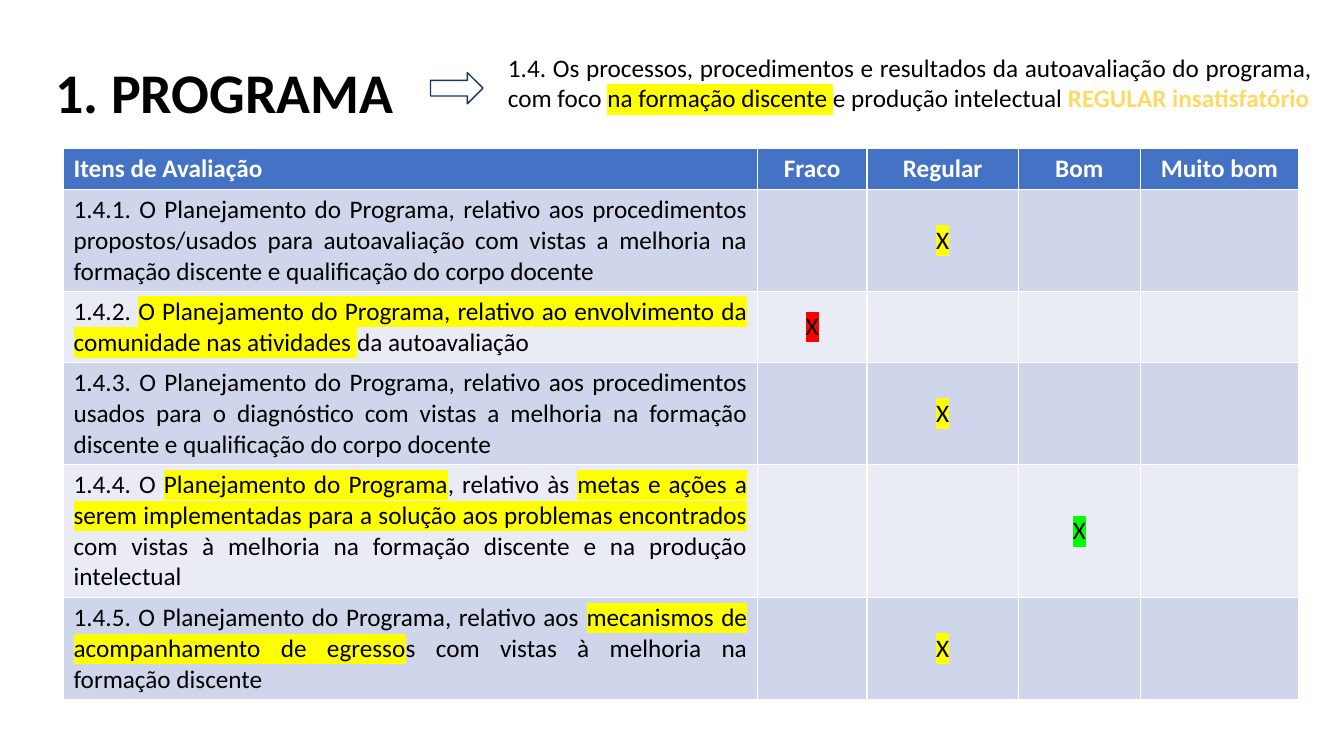
from dataclasses import dataclass
from typing import Optional

import pptx
import pptx.dml.color
import pptx.enum.shapes
import pptx.enum.text
import pptx.oxml.ns
import pptx.util
from lxml import etree

EMU_PER_PX = 9144  # 100 px to the inch
FONT = "Calibri"
COLORS = {
    "black": "000000",
    "white": "FFFFFF",
    "header": "4472C4",
    "band_dark": "CFD5EA",
    "band_light": "E9EBF5",
    "gold": "FFD966",
    "navy": "1E3256",
    "yellow": "FFFF00",
    "red": "FF0000",
    "green": "00FF00",
}
ALIGN = pptx.enum.text.PP_ALIGN
ANCHOR = pptx.enum.text.MSO_ANCHOR


@dataclass(frozen=True)
class Run:
    text: str
    color: str = "black"
    size: int = 18
    bold: bool = False
    highlight: Optional[str] = None


@dataclass(frozen=True)
class Item:
    """One evaluated item: its wording, and the rating column and colour of its mark."""
    height: int
    runs: tuple[Run, ...]
    rating: str
    mark: str


COLUMNS = {"Itens de Avaliação": 688, "Fraco": 109, "Regular": 150, "Bom": 121, "Muito bom": 157}
HEADER_HEIGHT = 41
ITEMS = (
    Item(101, (
        Run("1.4.1. O Planejamento do Programa, relativo aos procedimentos propostos/usados para "
            "autoavaliação com vistas a melhoria na formação discente e qualificação do corpo docente"),
    ), "Regular", "yellow"),
    Item(71, (
        Run("1.4.2. "),
        Run("O Planejamento do Programa, relativo ao envolvimento da comunidade nas atividades ",
            highlight="yellow"),
        Run("da autoavaliação"),
    ), "Fraco", "red"),
    Item(101, (
        Run("1.4.3. O Planejamento do Programa, relativo aos procedimentos usados para o diagnóstico "
            "com vistas a melhoria na formação discente e qualificação do corpo docente"),
    ), "Regular", "yellow"),
    Item(132, (
        Run("1.4.4. O "),
        Run("Planejamento do Programa", highlight="yellow"),
        Run(", relativo às "),
        Run("metas e ações a serem implementadas para a solução aos problemas encontrados ",
            highlight="yellow"),
        Run("com vistas à melhoria na formação discente e na produção intelectual"),
    ), "Bom", "green"),
    Item(101, (
        Run("1.4.5. O Planejamento do Programa, relativo aos "),
        Run("mecanismos de acompanhamento de egresso", highlight="yellow"),
        Run("s com vistas à melhoria na formação discente"),
    ), "Regular", "yellow"),
)
SUBTITLE = (
    Run("1.4. Os processos, procedimentos e resultados da autoavaliação do programa, com foco "),
    Run("na formação discente ", highlight="yellow"),
    Run("e produção intelectual "),
    Run("REGULAR insatisfatório", color="gold", bold=True),
)


def px(length: int) -> pptx.util.Emu:
    return pptx.util.Emu(length * EMU_PER_PX)


def rgb(name: str) -> pptx.dml.color.RGBColor:
    return pptx.dml.color.RGBColor.from_string(COLORS[name])


def write(paragraph, runs: tuple[Run, ...], **paragraph_format) -> None:
    for name, value in paragraph_format.items():
        setattr(paragraph, name, value)
    for item in runs:
        run = paragraph.add_run()
        run.text = item.text
        run.font.color.rgb = rgb(item.color)
        font_format = {"name": FONT, "size": pptx.util.Pt(item.size), "bold": item.bold}
        for name, value in font_format.items():
            setattr(run.font, name, value)
        if item.highlight:
            qn = pptx.oxml.ns.qn
            highlight = etree.Element(qn("a:highlight"))
            etree.SubElement(highlight, qn("a:srgbClr"), val=COLORS[item.highlight])
            run.font._element.find(qn("a:solidFill")).addnext(highlight)


def add_text(slide, box: tuple[int, int, int, int], runs: tuple[Run, ...],
             anchor: ANCHOR, **paragraph_format) -> None:
    frame = slide.shapes.add_textbox(*map(px, box)).text_frame
    frame.word_wrap = True
    frame.vertical_anchor = anchor
    write(frame.paragraphs[0], runs, **paragraph_format)


def add_arrow(slide) -> None:
    arrow = slide.shapes.add_shape(
        pptx.enum.shapes.MSO_SHAPE.RIGHT_ARROW, *map(px, (427, 72, 52, 31)))
    arrow.shadow.inherit = False
    arrow.fill.background()
    arrow.line.color.rgb = rgb("navy")
    arrow.line.width = pptx.util.Pt(1)


def fill_cell(cell, fill: str, runs: tuple[Run, ...], alignment: ALIGN, anchor: ANCHOR) -> None:
    cell.fill.solid()
    cell.fill.fore_color.rgb = rgb(fill)
    cell.vertical_anchor = anchor
    write(cell.text_frame.paragraphs[0], runs, alignment=alignment)


def add_ratings(slide) -> None:
    heights = [HEADER_HEIGHT, *(item.height for item in ITEMS)]
    table = slide.shapes.add_table(
        len(heights), len(COLUMNS), px(63), px(147),
        px(sum(COLUMNS.values())), px(sum(heights))).table
    for row, height in zip(table.rows, heights):
        row.height = px(height)
    for index, (heading, width) in enumerate(COLUMNS.items()):
        table.columns[index].width = px(width)
        centred = (ALIGN.CENTER, ANCHOR.MIDDLE)
        fill_cell(table.cell(0, index), "header", (Run(heading, "white", bold=True),),
                  *(centred if index else (ALIGN.LEFT, ANCHOR.TOP)))
        for row_index, item in enumerate(ITEMS, start=1):
            cell = table.cell(row_index, index)
            band = "band_dark" if row_index % 2 else "band_light"
            if index == 0:
                fill_cell(cell, band, item.runs, ALIGN.JUSTIFY, ANCHOR.TOP)
            else:
                mark = (Run("X", highlight=item.mark),) if heading == item.rating else ()
                fill_cell(cell, band, mark, *centred)


def main() -> None:
    presentation = pptx.Presentation()
    presentation.slide_width, presentation.slide_height = px(1333), px(750)
    slide = presentation.slides.add_slide(presentation.slide_layouts[6])
    add_text(slide, (45, 22, 1150, 145), (Run("1. PROGRAMA", size=40, bold=True),),
             ANCHOR.MIDDLE, line_spacing=0.9)
    add_ratings(slide)
    add_text(slide, (494, 47, 817, 71), SUBTITLE, ANCHOR.TOP, alignment=ALIGN.JUSTIFY)
    add_arrow(slide)
    presentation.save("out.pptx")


if __name__ == "__main__":
    main()
